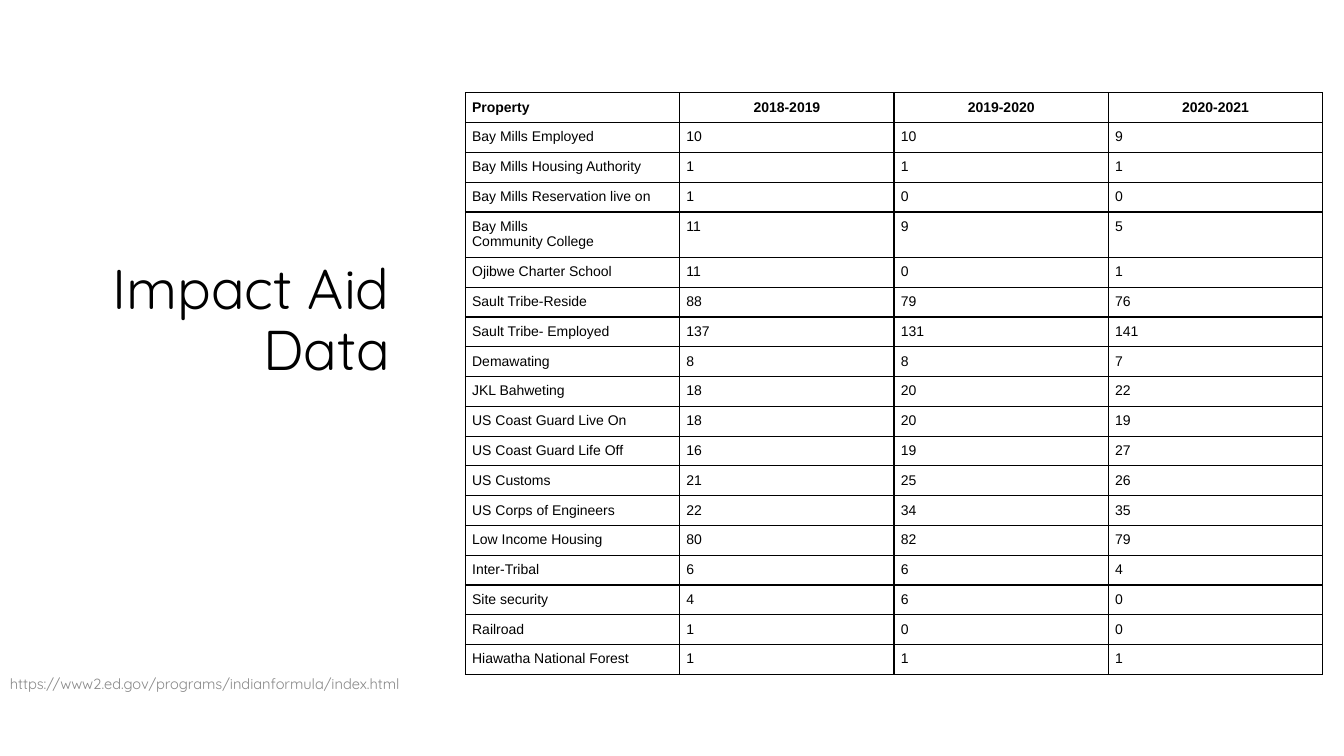
from lxml import etree
from pptx import Presentation
from pptx.dml.color import RGBColor
from pptx.enum.text import MSO_ANCHOR, MSO_AUTO_SIZE, PP_ALIGN
from pptx.oxml.ns import qn
from pptx.util import Cm, Pt

LEFT, CENTER, RIGHT = PP_ALIGN.LEFT, PP_ALIGN.CENTER, PP_ALIGN.RIGHT
MIDDLE = MSO_ANCHOR.MIDDLE
NO_FIT = MSO_AUTO_SIZE.NONE

BLACK = RGBColor(0x00, 0x00, 0x00)
GRAY = RGBColor(0x88, 0x88, 0x88)
HEAD_FONT = "Quicksand"
TABLE_FONT = "Arial"

COL_WIDTH = Cm(5.4)
LINE_HEIGHT = Cm(0.4)
CELL_MARGIN = Cm(0.17)
ROW_HEIGHT = Cm(0.75)

HEADER = ("Property", "2018-2019", "2019-2020", "2020-2021")
COUNTS = (
    ("Bay Mills Employed", 10, 10, 9),
    ("Bay Mills Housing Authority", 1, 1, 1),
    ("Bay Mills Reservation live on", 1, 0, 0),
    ("Bay Mills\nCommunity College", 11, 9, 5),
    ("Ojibwe Charter School", 11, 0, 1),
    ("Sault Tribe-Reside", 88, 79, 76),
    ("Sault Tribe- Employed", 137, 131, 141),
    ("Demawating", 8, 8, 7),
    ("JKL Bahweting", 18, 20, 22),
    ("US Coast Guard Live On", 18, 20, 19),
    ("US Coast Guard Life Off", 16, 19, 27),
    ("US Customs", 21, 25, 26),
    ("US Corps of Engineers", 22, 34, 35),
    ("Low Income Housing", 80, 82, 79),
    ("Inter-Tribal", 6, 6, 4),
    ("Site security", 4, 6, 0),
    ("Railroad", 1, 0, 0),
    ("Hiawatha National Forest", 1, 1, 1),
)


def write(tf, lines, font, size, color, align=LEFT, bold=False, spacing=1.0):
    for i, line in enumerate(lines):
        p = tf.paragraphs[0] if i == 0 else tf.add_paragraph()
        p.alignment = align
        p.line_spacing = spacing
        r = p.add_run()
        r.text = line
        r.font.name = font
        r.font.size = Pt(size)
        r.font.bold = bold
        r.font.color.rgb = color


def frame(sp):
    tf = sp.text_frame
    tf.word_wrap = True
    tf.auto_size = NO_FIT
    tf.vertical_anchor = MIDDLE
    return tf


def add_title(s):
    sp = s.shapes.title
    sp.left, sp.top, sp.width, sp.height = Cm(1.04), Cm(6.32), Cm(9.42), Cm(3.58)
    write(frame(sp), ("Impact Aid ", "Data "), HEAD_FONT, 40, BLACK, RIGHT, spacing=0.9)


def add_source_link(s):
    sp = s.shapes.add_textbox(Cm(0), Cm(16.71), Cm(21.59), Cm(1.02))
    url = "https://www2.ed.gov/programs/indianformula/index.html"
    write(frame(sp), (url,), HEAD_FONT, 10.5, GRAY)


def border_cell(cell):
    tc_pr = cell._tc.get_or_add_tcPr()
    for i, side in enumerate(("a:lnL", "a:lnR", "a:lnT", "a:lnB")):
        ln = etree.Element(qn(side), w=str(Pt(1)))
        fill = etree.SubElement(ln, qn("a:solidFill"))
        etree.SubElement(fill, qn("a:srgbClr"), val=str(BLACK))
        tc_pr.insert(i, ln)


def fill_cell(cell, text, align, bold):
    cell.margin_left = cell.margin_right = CELL_MARGIN
    cell.margin_top = cell.margin_bottom = CELL_MARGIN
    cell.fill.background()
    border_cell(cell)
    write(cell.text_frame, text.split("\n"), TABLE_FONT, 10, BLACK, align, bold)


def add_counts_table(s):
    rows = (HEADER,) + COUNTS
    shape = s.shapes.add_table(len(rows), len(HEADER), Cm(11.73), Cm(2.34),
                               COL_WIDTH * len(HEADER), ROW_HEIGHT * len(rows))
    table = shape.table
    table.first_row = table.horz_banding = False
    for column in table.columns:
        column.width = COL_WIDTH
    for i, values in enumerate(rows):
        table.rows[i].height = ROW_HEIGHT + LINE_HEIGHT * values[0].count("\n")
        for j, value in enumerate(values):
            align = CENTER if i == 0 and j > 0 else LEFT
            fill_cell(table.cell(i, j), str(value), align, i == 0)


def main():
    prs = Presentation()
    prs.slide_width, prs.slide_height = Cm(33.87), Cm(19.05)
    s = prs.slides.add_slide(prs.slide_layouts[5])
    add_title(s)
    add_source_link(s)
    add_counts_table(s)
    prs.save("out.pptx")


if __name__ == "__main__":
    main()
